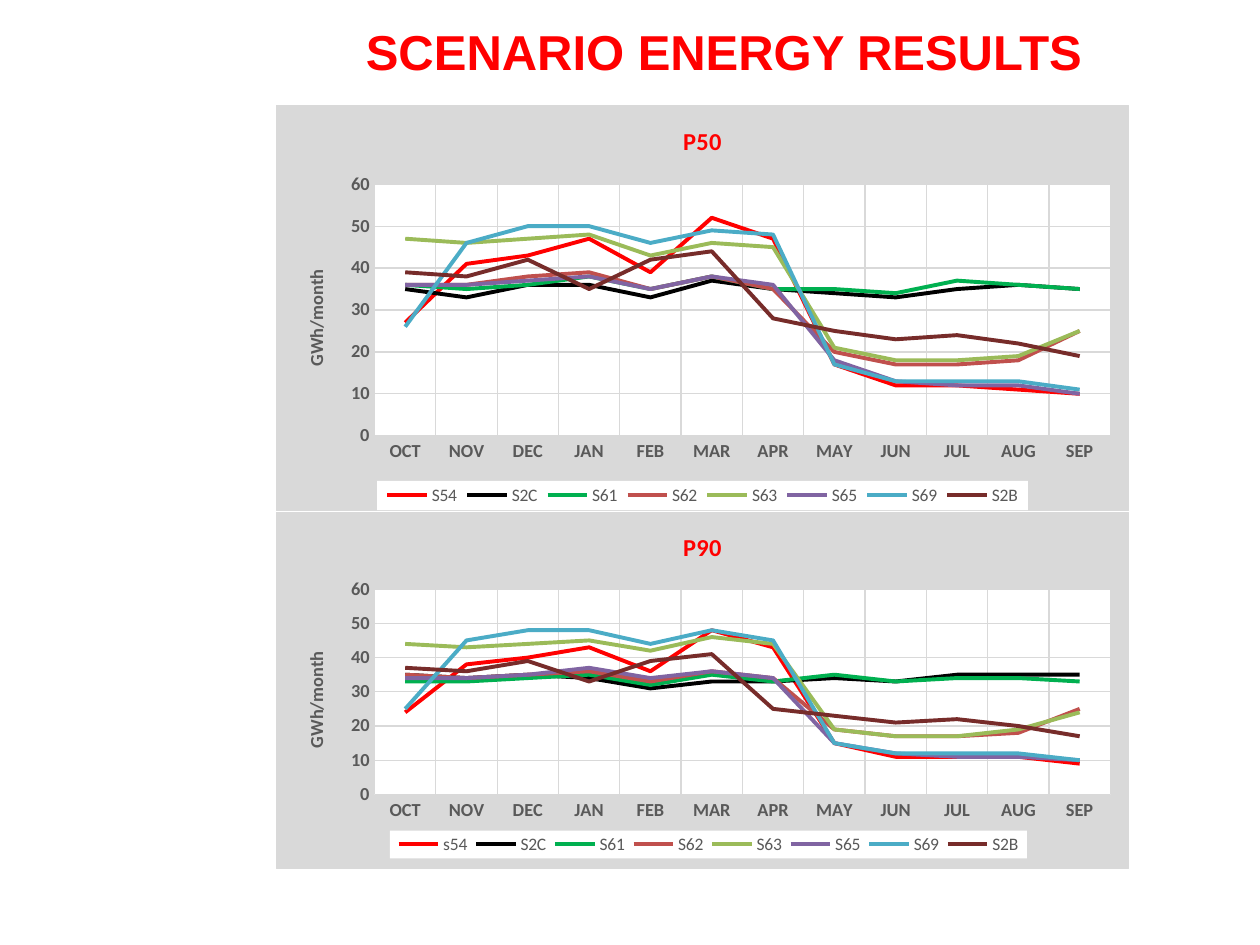
import pptx
import pptx.chart.data
import pptx.dml.color
import pptx.enum.chart
import pptx.enum.text
import pptx.oxml
import pptx.oxml.ns
import pptx.util
from pptx.util import Inches

THEME = {
    "red": "FF0000", "text": "595959", "grid": "D9D9D9", "white": "FFFFFF",
    "head": "Arial", "body": "Calibri",
    "big": 28, "title": 14, "axis": 10.5, "key": 10, "thin": 0.75, "line": 2.25,
}
COLORS = ["FF0000", "000000", "00B050", "C0504D",
          "9BBB59", "8064A2", "4BACC6", "772C2A"]
MONTHS = ["OCT", "NOV", "DEC", "JAN", "FEB", "MAR",
          "APR", "MAY", "JUN", "JUL", "AUG", "SEP"]

HEADING = "SCENARIO ENERGY RESULTS"
UNIT = "GWh/month"
LEFT, WIDTH = 2.19, 6.77

# plot and key: left, top, width, height as shares of the chart
CHARTS = [
    {
        "title": "P50", "top": 0.83, "height": 3.23,
        "plot": (0.115, 0.195, 0.864, 0.62),
        "key": (0.118, 0.926, 0.764, 0.072),
        "rows": {
            "S54": [27, 41, 43, 47, 39, 52, 47, 17, 12, 12, 11, 10],
            "S2C": [35, 33, 36, 36, 33, 37, 35, 34, 33, 35, 36, 35],
            "S61": [36, 35, 36, 38, 35, 38, 35, 35, 34, 37, 36, 35],
            "S62": [36, 36, 38, 39, 35, 38, 35, 20, 17, 17, 18, 25],
            "S63": [47, 46, 47, 48, 43, 46, 45, 21, 18, 18, 19, 25],
            "S65": [36, 36, 37, 38, 35, 38, 36, 18, 13, 12, 12, 10],
            "S69": [26, 46, 50, 50, 46, 49, 48, 17, 13, 13, 13, 11],
            "S2B": [39, 38, 42, 35, 42, 44, 28, 25, 23, 24, 22, 19],
        },
    },
    {
        "title": "P90", "top": 4.06, "height": 2.84,
        "plot": (0.115, 0.216, 0.864, 0.576),
        "key": (0.133, 0.893, 0.748, 0.078),
        "rows": {
            "s54": [24, 38, 40, 43, 36, 48, 43, 15, 11, 11, 11, 9],
            "S2C": [35, 34, 35, 34, 31, 33, 33, 34, 33, 35, 35, 35],
            "S61": [33, 33, 34, 35, 32, 35, 33, 35, 33, 34, 34, 33],
            "S62": [35, 34, 35, 36, 33, 36, 34, 19, 17, 17, 18, 25],
            "S63": [44, 43, 44, 45, 42, 46, 44, 19, 17, 17, 19, 24],
            "S65": [34, 34, 35, 37, 34, 36, 34, 15, 12, 11, 11, 10],
            "S69": [25, 45, 48, 48, 44, 48, 45, 15, 12, 12, 12, 10],
            "S2B": [37, 36, 39, 33, 39, 41, 25, 23, 21, 22, 20, 17],
        },
    },
]


def style(font, size, color, bold=False, face=THEME["body"]):
    font.name, font.size, font.bold = face, pptx.util.Pt(size), bold
    font.color.rgb = pptx.dml.color.RGBColor.from_string(color)


def stroke(line, color, width):
    line.color.rgb = pptx.dml.color.RGBColor.from_string(color)
    line.width = pptx.util.Pt(width)


def write(frame, text, *look):
    run = frame.paragraphs[0].add_run()
    run.text = text
    style(run.font, *look)


def paint(node, fill, edge=None):
    """Fill a chart part, with an optional thin border."""
    line = "<a:noFill/>"
    if edge:
        line = f'<a:solidFill><a:srgbClr val="{edge}"/></a:solidFill>'
    part = pptx.oxml.parse_xml(
        f'<c:spPr {pptx.oxml.ns.nsdecls("c", "a")}><a:solidFill>'
        f'<a:srgbClr val="{fill}"/></a:solidFill>'
        f'<a:ln w="{pptx.util.Pt(THEME["thin"])}">{line}</a:ln></c:spPr>')
    text = node.find(pptx.oxml.ns.qn("c:txPr"))
    if text is None:
        node.append(part)
    else:
        text.addprevious(part)


def place(node, index, box, inner=False):
    """Give a chart part a fixed place, as shares of the chart."""
    old = node.find(pptx.oxml.ns.qn("c:layout"))
    if old is not None:
        node.remove(old)
    tags = '<c:layoutTarget val="inner"/>' if inner else ""
    tags += '<c:xMode val="edge"/><c:yMode val="edge"/>'
    tags += "".join(f'<c:{name} val="{share}"/>' for name, share in zip("xywh", box))
    node.insert(index, pptx.oxml.parse_xml(
        f'<c:layout {pptx.oxml.ns.nsdecls("c")}>'
        f"<c:manualLayout>{tags}</c:manualLayout></c:layout>"))


def set_axes(chart):
    for axis in (chart.category_axis, chart.value_axis):
        axis.major_tick_mark = axis.minor_tick_mark = pptx.enum.chart.XL_TICK_MARK.NONE
        axis.has_major_gridlines = True
        stroke(axis.major_gridlines.format.line, THEME["grid"], THEME["thin"])
        style(axis.tick_labels.font, THEME["axis"], THEME["text"], True)
    stroke(chart.category_axis.format.line, THEME["grid"], THEME["thin"])
    scale = chart.value_axis
    scale.format.line.fill.background()
    scale.minimum_scale, scale.maximum_scale, scale.major_unit = 0, 60, 10
    scale.tick_labels.number_format = "0"
    scale.tick_labels.number_format_is_linked = False
    write(scale.axis_title.text_frame, UNIT, THEME["axis"], THEME["text"], True)


def add_lines(slide, item):
    data = pptx.chart.data.CategoryChartData(number_format="0")
    data.categories = MONTHS
    for name, values in item["rows"].items():
        data.add_series(name, values)
    chart = slide.shapes.add_chart(
        pptx.enum.chart.XL_CHART_TYPE.LINE, Inches(LEFT), Inches(item["top"]),
        Inches(WIDTH), Inches(item["height"]), data).chart
    style(chart.font, THEME["key"], "000000")
    chart.plots[0].vary_by_categories = False
    write(chart.chart_title.text_frame, item["title"],
          THEME["title"], THEME["red"], True)
    chart.chart_title.include_in_layout = False
    set_axes(chart)
    for series, color in zip(chart.plots[0].series, COLORS):
        series.smooth = False
        series.marker.style = pptx.enum.chart.XL_MARKER_STYLE.NONE
        stroke(series.format.line, color, THEME["line"])

    chart.has_legend = True
    chart.legend.position = pptx.enum.chart.XL_LEGEND_POSITION.BOTTOM
    chart.legend.include_in_layout = False
    style(chart.legend.font, THEME["key"], THEME["text"])
    root = chart.element
    plot, key = root.xpath("//c:plotArea")[0], root.xpath("//c:legend")[0]
    place(plot, 0, item["plot"], inner=True)
    place(key, 1, item["key"])
    paint(plot, THEME["white"])
    paint(key, THEME["white"])
    paint(root, THEME["grid"], THEME["grid"])


def main():
    deck = pptx.Presentation()
    deck.slide_width, deck.slide_height = Inches(10), Inches(7.5)
    slide = deck.slides.add_slide(deck.slide_layouts[5])
    title = slide.shapes.title
    title.left, title.top = Inches(1.68), Inches(0.12)
    title.width, title.height = Inches(8.13), Inches(0.57)
    frame = title.text_frame
    frame.auto_size = pptx.enum.text.MSO_AUTO_SIZE.SHAPE_TO_FIT_TEXT
    frame.vertical_anchor = pptx.enum.text.MSO_ANCHOR.TOP
    frame.paragraphs[0].alignment = pptx.enum.text.PP_ALIGN.CENTER
    write(frame, HEADING, THEME["big"], THEME["red"], True, THEME["head"])
    for item in CHARTS:
        add_lines(slide, item)
    deck.save("out.pptx")


if __name__ == "__main__":
    main()
